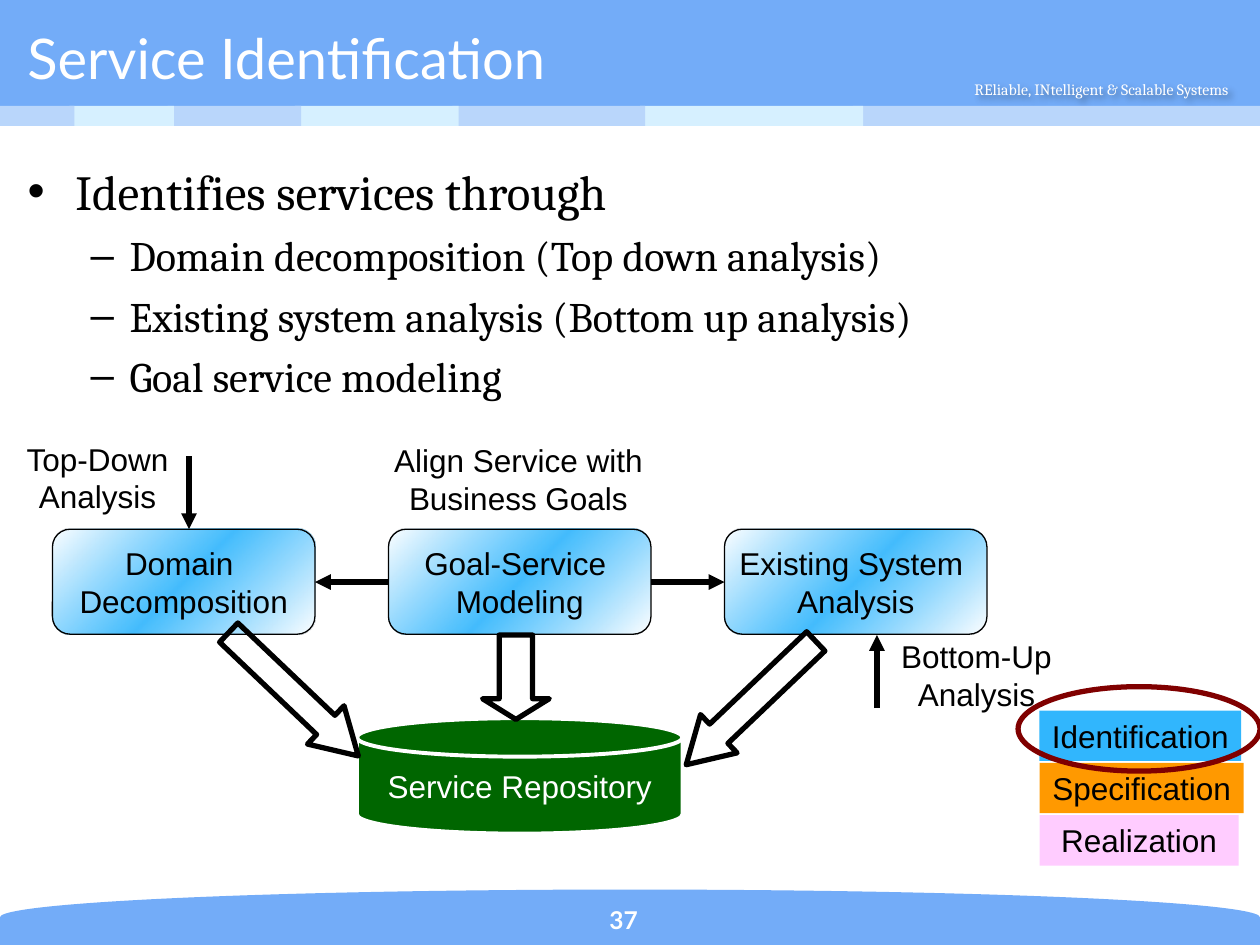
"""Builds the Service Identification slide on a grid of 120 columns by 90 rows."""
from lxml.etree import SubElement
from pptx import Presentation
from pptx.dml.color import RGBColor
from pptx.enum.shapes import MSO_CONNECTOR as Connector, MSO_SHAPE as Shape
from pptx.enum.text import MSO_ANCHOR as Anchor, PP_ALIGN as Align
from pptx.oxml import parse_xml
from pptx.oxml.ns import nsdecls, qn
from pptx.util import Inches, Pt

COLORS = {
    "white": "FFFFFF", "black": "000000", "blue": "73ACF8", "pale": "B9D6FB",
    "ice": "D6F0FF", "sky": "31B6FD", "orange": "FF9900", "pink": "FFCCFF",
    "green": "006600", "maroon": "800000",
}
COLORS = {name: RGBColor.from_string(value) for name, value in COLORS.items()}

deck = Presentation()
deck.slide_width, deck.slide_height = Inches(10), Inches(7.5)
CELL = deck.slide_width / 120
page = deck.slides.add_slide(deck.slide_layouts[6])


def add_box(kind, area, fill=None, line=None, weight=3):
    place = [round(cells * CELL) for cells in area]
    if kind is None:
        return page.shapes.add_textbox(*place)
    box = page.shapes.add_shape(kind, *place)
    box.shadow.inherit = False
    if fill:
        box.fill.solid()
        box.fill.fore_color.rgb = COLORS[fill]
    else:
        box.fill.background()
    if line:
        box.line.color.rgb = COLORS[line]
        box.line.width = Pt(weight)
    else:
        box.line.fill.background()
    return box


def write(box, text, size=18, font="Arial", color="black", align=Align.CENTER,
          anchor=Anchor.TOP, wrap=False, bold=False):
    frame = box.text_frame
    frame.text = text
    frame.word_wrap = wrap
    frame.vertical_anchor = anchor
    for para in frame.paragraphs:
        para.alignment = align
        for span in para.runs:
            span.font.size, span.font.name, span.font.bold = Pt(size), font, bold
            span.font.color.rgb = COLORS[color]


footer = add_box(Shape.FLOWCHART_DELAY, (57.36, 27.36, 5.28, 120), "blue")
footer.rotation = 270
add_box(Shape.RECTANGLE, (0, 0, 120, 10.44), "blue")

tagline = add_box(None, (90.24, 6.96, 29.28, 3))
write(tagline, "REliable, INtelligent & Scalable Systems", 9, "Cambria", "white", wrap=True)
tagline._element.spPr.append(parse_xml(
    f'<a:effectLst {nsdecls("a")}><a:outerShdw blurRad="50800" dist="38100" dir="2700000">'
    '<a:srgbClr val="000000"><a:alpha val="40000"/></a:srgbClr></a:outerShdw></a:effectLst>'))

strips = [(81.24, 38.76), (60.96, 21.24), (43.08, 18.36), (28.08, 15.6),
          (15.96, 12.72), (6.6, 9.96), (0, 7.08)]
for index, (left, width) in enumerate(strips):
    add_box(Shape.RECTANGLE, (left, 10.08, width, 1.92), ("pale", "ice")[index % 2])

write(add_box(None, (52.8, 85.56, 13.2, 4.08)), "37", 14, "Lato", "white",
      anchor=Anchor.MIDDLE, wrap=True, bold=True)
write(add_box(None, (1.44, 1.8, 89.52, 7.2)), "Service Identification", 32, "Lato", "white",
      Align.LEFT, Anchor.MIDDLE, True)

body = add_box(None, (1.44, 14.76, 115.32, 69))
write(body, "Identifies services through\n"
      "Domain decomposition (Top down analysis)\n"
      "Existing system analysis (Bottom up analysis)\n"
      "Goal service modeling", 24, "Cambria", align=Align.LEFT, wrap=True)
for index, para in enumerate(body.text_frame.paragraphs):
    margin, indent, bullet = (0.81, -0.31, "–") if index else (0.38, -0.38, "•")
    props = para._p.get_or_add_pPr()
    props.set("marL", str(Inches(margin)))
    props.set("indent", str(Inches(indent)))
    SubElement(props, qn("a:buFont")).set("typeface", "Arial")
    SubElement(props, qn("a:buChar")).set("char", bullet)
    if index:
        para.level = 1
        para.space_before = Pt(5.6)
    else:
        para.runs[0].font.size = Pt(28)

phases = [("Identification", "sky", 19.2), ("Specification", "orange", 19.44),
          ("Realization", "pink", 18.96)]
for row, (name, color, width) in enumerate(phases):
    write(add_box(Shape.RECTANGLE, (99, 67.68 + 4.98 * row, width, 4.8), color), name)

steps = ["Domain \nDecomposition", "Goal-Service \nModeling", "Existing System \nAnalysis"]
for column, name in enumerate(steps):
    step = add_box(Shape.ROUNDED_RECTANGLE, (5 + 32 * column, 50.4, 25, 10), "sky", "black", 0.75)
    step.adjustments[0] = 0.17
    solid = step._element.spPr.find(qn("a:solidFill"))
    solid.getparent().replace(solid, parse_xml(
        f'<a:gradFill {nsdecls("a")} rotWithShape="1"><a:gsLst>'
        f'<a:gs pos="0"><a:srgbClr val="{COLORS["white"]}"/></a:gs>'
        f'<a:gs pos="50000"><a:srgbClr val="{COLORS["sky"]}"><a:alpha val="90000"/></a:srgbClr></a:gs>'
        f'<a:gs pos="100000"><a:srgbClr val="{COLORS["white"]}"/></a:gs>'
        '</a:gsLst><a:lin ang="2700000" scaled="1"/></a:gradFill>'))
    write(step, name, anchor=Anchor.MIDDLE)

repository = add_box(Shape.FLOWCHART_MAGNETIC_DISK, (34, 68.4, 31, 11), "green", "white", 2.25)
write(repository, "Service Repository", color="white", anchor=Anchor.MIDDLE)

flows = [(18, 43.44, 18, 50.4), (37, 55.44, 30, 55.44),
         (62, 55.44, 69, 55.44), (83.52, 67.44, 83.52, 60.48)]
for flow in flows:
    arrow = page.shapes.add_connector(Connector.STRAIGHT, *[round(cells * CELL) for cells in flow])
    arrow.line.color.rgb = COLORS["black"]
    arrow.line.width = Pt(3)
    props = arrow._element.spPr
    SubElement(props.find(qn("a:ln")), qn("a:tailEnd")).set("type", "triangle")
    SubElement(props, qn("a:effectLst"))

labels = [("Top-Down\nAnalysis", 1.2, 41.28, 16.2), ("Bottom-Up\nAnalysis", 84.6, 60.12, 16.8),
          ("Align Service with\nBusiness Goals", 36.36, 41.4, 26.04)]
for text, left, top, width in labels:
    write(add_box(None, (left, top, width, 8.4)), text)

block_arrows = [((45.96, 60.48, 6.36, 8.04), 0, 0.31), ((25.44, 57.6, 5.04, 17.04), 313.6, 0.85),
                ((69, 58.44, 5.04, 17.04), 46.4, 0.85)]
for area, angle, head in block_arrows:
    arrow = add_box(Shape.DOWN_ARROW, area, line="black")
    arrow.rotation = angle
    arrow.adjustments[0], arrow.adjustments[1] = 0.5, head

add_box(Shape.OVAL, (96.96, 65.4, 23.04, 8.04), line="maroon")

deck.save("out.pptx")
